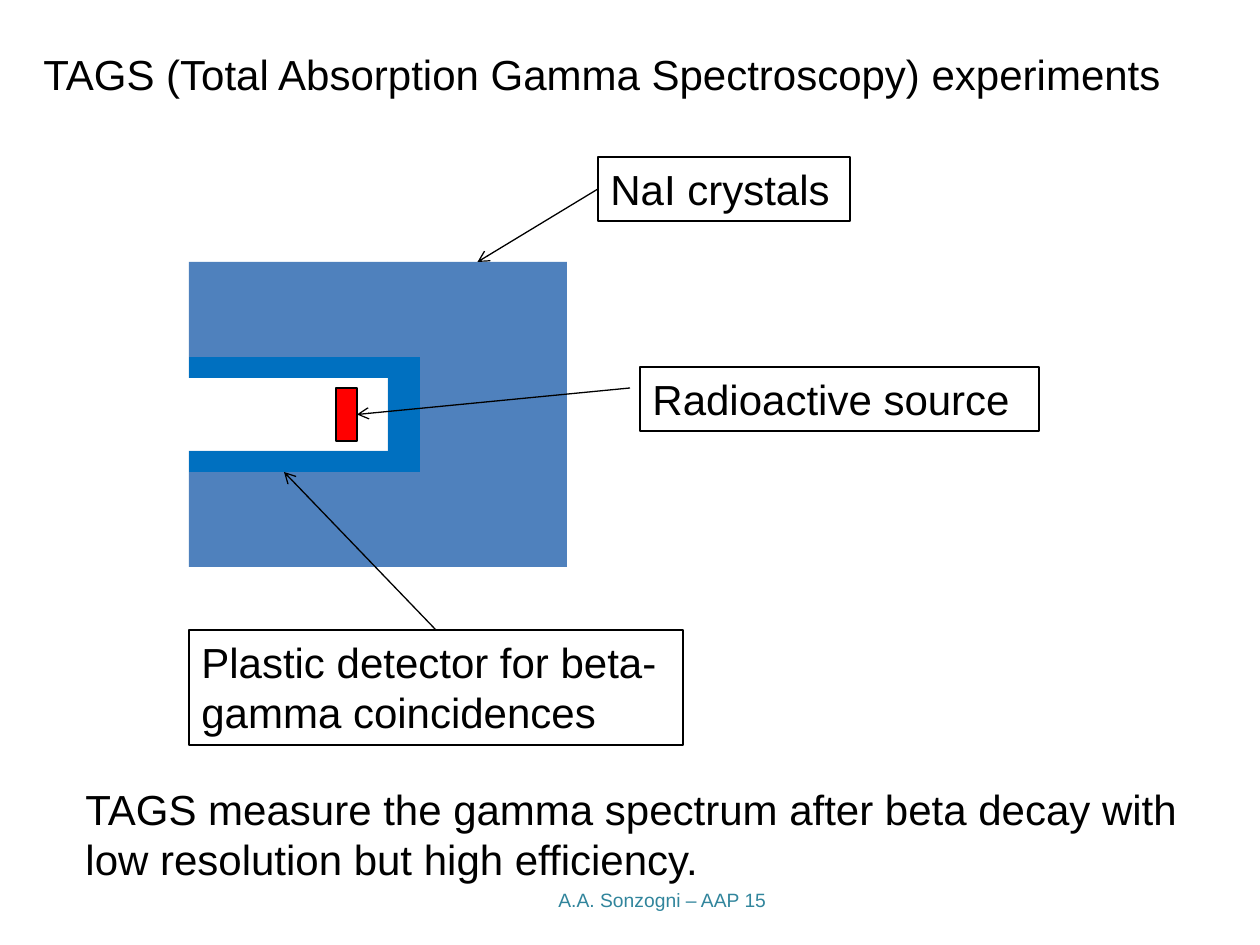
"""Build a slide on Total Absorption Gamma Spectroscopy experiments."""
from lxml import etree
from pptx import Presentation
from pptx.dml.color import RGBColor
from pptx.enum.shapes import MSO_CONNECTOR, MSO_SHAPE
from pptx.enum.text import MSO_ANCHOR, MSO_AUTO_SIZE, PP_ALIGN
from pptx.oxml.ns import qn
from pptx.util import Pt

RECTANGLE = MSO_SHAPE.RECTANGLE
STRAIGHT = MSO_CONNECTOR.STRAIGHT
FIT_SHAPE = MSO_AUTO_SIZE.SHAPE_TO_FIT_TEXT
TOP_ANCHOR = MSO_ANCHOR.TOP
LEFT_ALIGN = PP_ALIGN.LEFT

BLACK = RGBColor(0x00, 0x00, 0x00)
RED = RGBColor(0xFF, 0x00, 0x00)
CRYSTAL_BLUE = RGBColor(0x4F, 0x81, 0xBD)
PLASTIC_BLUE = RGBColor(0x00, 0x70, 0xC0)
FOOTER_TEAL = RGBColor(0x31, 0x85, 0x9C)

FONT = "Arial"
LINE_WIDTH = Pt(0.75)
EMU_PER_PX = 914400 / 126
SIDE_TOP, SIDE_LEFT, SIDE_RIGHT = 0, 1, 3


def emu(px):
    return round(px * EMU_PER_PX)


def write_text(shape, text, size, color):
    frame = shape.text_frame
    frame.word_wrap = True
    frame.auto_size = FIT_SHAPE
    frame.vertical_anchor = TOP_ANCHOR
    paragraph = frame.paragraphs[0]
    paragraph.alignment = LEFT_ALIGN
    run = paragraph.add_run()
    run.text = text
    run.font.name = FONT
    run.font.size = Pt(size)
    run.font.color.rgb = color


def add_text(slide, box, text, size=24, color=BLACK):
    shape = slide.shapes.add_textbox(*map(emu, box))
    write_text(shape, text, size, color)


def add_block(shapes, box, fill=None, outlined=False):
    shape = shapes.add_shape(RECTANGLE, *map(emu, box))
    shape.shadow.inherit = False
    if fill is None:
        shape.fill.background()
    else:
        shape.fill.solid()
        shape.fill.fore_color.rgb = fill
    if outlined:
        shape.line.color.rgb = BLACK
        shape.line.width = LINE_WIDTH
    else:
        shape.line.fill.background()
    return shape


def add_label(slide, box, text):
    shape = add_block(slide.shapes, box, outlined=True)
    write_text(shape, text, 24, BLACK)
    return shape


def add_arrow(slide, start, end):
    arrow = slide.shapes.add_connector(STRAIGHT, *map(emu, start + end))
    arrow.line.color.rgb = BLACK
    arrow.line.width = LINE_WIDTH
    etree.SubElement(arrow.line._get_or_add_ln(), qn("a:tailEnd"), type="arrow")
    etree.SubElement(arrow._element.spPr, qn("a:effectLst"))
    return arrow


def add_detector(slide):
    shapes = slide.shapes.add_group_shape().shapes
    crystal = add_block(shapes, (388, 262, 179, 305), CRYSTAL_BLUE)
    for top in (262, 451):
        add_block(shapes, (189, top, 199, 116), CRYSTAL_BLUE)
    source = add_block(shapes, (336, 388, 21, 53), RED, outlined=True)
    for top in (357, 451):
        add_block(shapes, (189, top, 231, 21), PLASTIC_BLUE)
    add_block(shapes, (388, 357, 32, 94), PLASTIC_BLUE)
    return crystal, source


def main():
    presentation = Presentation()
    presentation.slide_width = emu(1260)
    presentation.slide_height = emu(945)
    slide = presentation.slides.add_slide(presentation.slide_layouts[6])

    add_text(slide, (546, 882, 336, 36), "A.A. Sonzogni – AAP 15", 11, FOOTER_TEAL)
    add_text(slide, (31, 42, 1166, 123),
             "TAGS (Total Absorption Gamma Spectroscopy) experiments")

    crystal_label = add_label(slide, (598, 157, 252, 64), "NaI crystals")
    crystal, source = add_detector(slide)
    add_label(slide, (640, 367, 399, 64), "Radioactive source")
    plastic_label = add_label(slide, (189, 630, 494, 115),
                              "Plastic detector for beta-gamma coincidences")

    plastic_arrow = add_arrow(slide, (436, 630), (284, 472))
    plastic_arrow.begin_connect(plastic_label, SIDE_TOP)
    source_arrow = add_arrow(slide, (630, 388), (357, 415))
    source_arrow.end_connect(source, SIDE_RIGHT)
    crystal_arrow = add_arrow(slide, (598, 189), (478, 262))
    crystal_arrow.begin_connect(crystal_label, SIDE_LEFT)
    crystal_arrow.end_connect(crystal, SIDE_TOP)

    add_text(slide, (73, 777, 1166, 174),
             "TAGS measure the gamma spectrum after beta decay with "
             "low resolution but high efficiency.")
    presentation.save("out.pptx")


if __name__ == "__main__":
    main()
